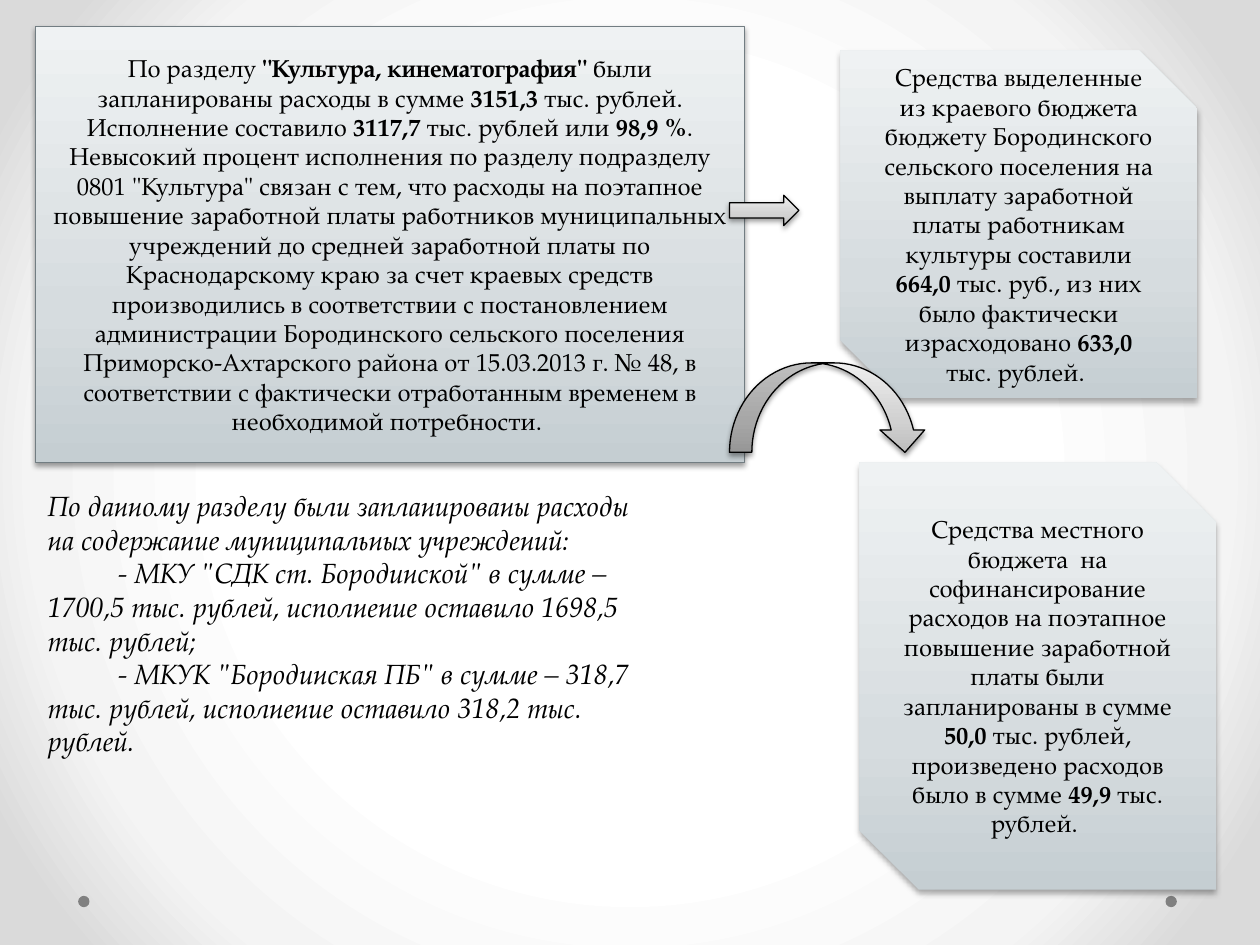
from lxml.etree import SubElement
from pptx import Presentation
from pptx.dml.color import RGBColor
from pptx.enum.shapes import MSO_SHAPE
from pptx.enum.text import MSO_ANCHOR, MSO_AUTO_SIZE, PP_ALIGN
from pptx.oxml.ns import qn
from pptx.util import Inches, Pt

PANEL = [(0, "C5CED2"), (35, "D6DCDF"), (100, "EFF2F3")]
ARROW = [(0, "BDBDBD"), (35, "D1D1D1"), (100, "EEEEEE")]
BACKDROP = [(50, "FFFFFF"), (76, "F4F4F4"), (92, "DADADA")]
CRISP = (38, 3.1, 1.6)
SOFT = (32, 3.5, 2.2)

CULTURE = (
    'По разделу *"Культура, кинематография" *были запланированы расходы в сумме '
    "*3151,3* тыс. рублей. Исполнение составило *3117,7 *тыс. рублей или *98,9 %*. "
    'Невысокий процент исполнения по разделу подразделу 0801 "Культура" связан с тем, '
    "что расходы на поэтапное повышение заработной платы работников муниципальных "
    "учреждений до средней заработной платы по Краснодарскому краю за счет краевых "
    "средств производились в соответствии с постановлением администрации Бородинского "
    "сельского поселения Приморско-Ахтарского района от 15.03.2013 г. № 48, в "
    "соответствии с фактически отработанным временем в необходимой потребности. "
)
REGIONAL = (
    "Средства выделенные из краевого бюджета бюджету Бородинского сельского поселения "
    "на выплату заработной платы работникам культуры составили *664,0* тыс. руб., из них "
    "было фактически израсходовано *633,0* тыс. рублей. "
)
LOCAL = (
    "Средства местного бюджета  на софинансирование расходов на поэтапное повышение "
    "заработной платы были запланированы в сумме *50,0* тыс. рублей, произведено "
    "расходов было в сумме *49,9* тыс. рублей. "
)
INSTITUTIONS = [
    ("По данному разделу были запланированы расходы на содержание муниципальных учреждений:", 0),
    ('- МКУ "СДК ст. Бородинской" в сумме – 1700,5 тыс. рублей, исполнение оставило '
     "1698,5 тыс. рублей;", 0.56),
    ('- МКУК "Бородинская ПБ" в сумме – 318,7 тыс. рублей, исполнение оставило '
     "318,2 тыс. рублей.", 0.56),
]


def color(value):
    return RGBColor.from_string(value)


class Painter:
    """Draws styled elements on the current slide."""

    font = "TeX Gyre Pagella"
    ink = "000000"

    def __init__(self, page):
        self.page = page

    def gradient(self, holder, stops, radial=False):
        solid = holder.find(qn("a:solidFill"))
        grad = holder.makeelement(qn("a:gradFill"), {"rotWithShape": "1"})
        holder.replace(solid, grad)
        stop_list = SubElement(grad, qn("a:gsLst"))
        for position, value in stops:
            stop = SubElement(stop_list, qn("a:gs"), pos=str(position * 1000))
            SubElement(stop, qn("a:srgbClr"), val=value)
        if radial:
            path = SubElement(grad, qn("a:path"), {"path": "circle"})
            SubElement(path, qn("a:fillToRect"), dict.fromkeys("ltrb", "50000"))
        else:
            SubElement(grad, qn("a:lin"), ang="16200000", scaled="0")

    def backdrop(self, stops):
        self.page.background.fill.solid()
        self.gradient(self.page.element.find(".//" + qn("p:bgPr")), stops, radial=True)

    def shadow(self, shape, opacity, blur, distance):
        effects = shape.element.spPr.find(qn("a:effectLst"))
        outer = SubElement(effects, qn("a:outerShdw"), blurRad=str(Pt(blur)),
                           dist=str(Pt(distance)), dir="5400000", rotWithShape="0")
        tint = SubElement(outer, qn("a:srgbClr"), val=self.ink)
        SubElement(tint, qn("a:alpha"), val=str(opacity * 1000))

    def shape(self, kind, place, fill, line=None):
        shape = self.page.shapes.add_shape(kind, *map(Inches, place))
        shape.shadow.inherit = False
        shape.fill.solid()
        shape.fill.fore_color.rgb = color(fill)
        if line:
            shape.line.color.rgb = color(line)
            shape.line.width = Pt(0.75)
        else:
            shape.line.fill.background()
        return shape

    def raised(self, kind, place, stops, line=None, shadow=CRISP):
        shape = self.shape(kind, place, stops[0][1], line)
        self.gradient(shape.element.spPr, stops)
        self.shadow(shape, *shadow)
        return shape

    def style(self, span, size, bold=False, italic=False):
        span.font.name = self.font
        span.font.size = Pt(size)
        span.font.bold = bold
        span.font.italic = italic
        span.font.color.rgb = color(self.ink)

    def panel(self, kind, place, text, line=None, shadow=CRISP):
        frame = self.raised(kind, place, PANEL, line, shadow).text_frame
        frame.word_wrap = True
        frame.vertical_anchor = MSO_ANCHOR.MIDDLE
        para = frame.paragraphs[0]
        para.alignment = PP_ALIGN.CENTER
        for index, part in enumerate(text.split("*")):
            span = para.add_run()
            span.text = part
            self.style(span, 14, bold=index % 2 == 1)

    def note(self, place, lines):
        frame = self.page.shapes.add_textbox(*map(Inches, place)).text_frame
        frame.word_wrap = True
        frame.auto_size = MSO_AUTO_SIZE.SHAPE_TO_FIT_TEXT
        frame.text = "\n".join(text for text, indent in lines)
        for para, (text, indent) in zip(frame.paragraphs, lines):
            properties = para._p.get_or_add_pPr()
            properties.set("marL", "0")
            properties.set("indent", str(Inches(indent)))
            self.style(para.runs[0], 16, italic=True)


def main():
    deck = Presentation()
    deck.slide_width, deck.slide_height = Inches(10), Inches(7.5)
    painter = Painter(deck.slides.add_slide(deck.slide_layouts[6]))
    painter.backdrop(BACKDROP)
    for left in (9.25, 0.62):
        painter.shape(MSO_SHAPE.OVAL, (left, 7.11, 0.09, 0.09), "808080")
    painter.panel(MSO_SHAPE.RECTANGLE, (0.28, 0.21, 5.63, 3.46), CULTURE, "727D82")
    painter.raised(MSO_SHAPE.RIGHT_ARROW, (5.79, 1.55, 0.55, 0.24), ARROW, "000000")
    snipped = MSO_SHAPE.SNIP_2_DIAG_RECTANGLE
    painter.panel(snipped, (6.67, 0.4, 2.83, 2.76), REGIONAL, shadow=SOFT)
    painter.panel(snipped, (6.82, 3.67, 2.83, 3.39), LOCAL, shadow=SOFT)
    painter.raised(MSO_SHAPE.CURVED_DOWN_ARROW, (5.79, 2.88, 1.57, 0.71), ARROW, "000000")
    painter.note((0.28, 3.83, 5, 2.26), INSTITUTIONS)
    deck.save("out.pptx")


if __name__ == "__main__":
    main()
